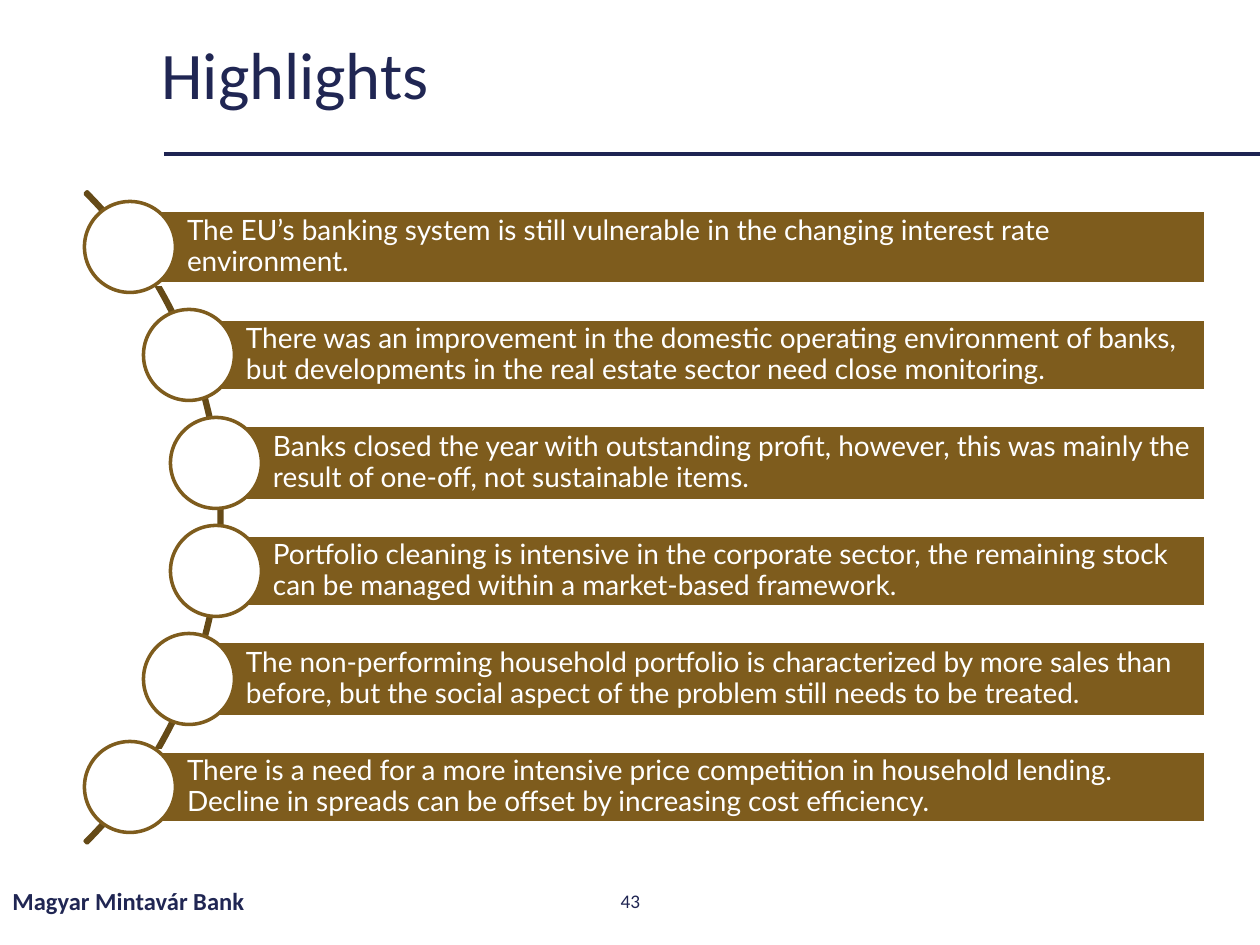
from lxml import etree
from pptx import Presentation
from pptx.dml.color import RGBColor
from pptx.enum.shapes import MSO_CONNECTOR, MSO_SHAPE
from pptx.enum.text import MSO_ANCHOR, PP_ALIGN
from pptx.oxml.ns import qn
from pptx.util import Emu, Pt

COLORS = {"navy": "202653", "rule": "1E2452", "bar": "7E5C1D",
          "arc": "654A17", "white": "FFFFFF"}

TITLE = "Highlights"
BANK = "Magyar Mintavár Bank"
PAGE = "43"

# (text, x of the circle's centre, bar height)
HIGHLIGHTS = [
    ("The EU’s banking system is still vulnerable in the changing interest rate "
     "environment.", 130, 74),
    ("There was an improvement in the domestic operating environment of banks, "
     "but developments in the real estate sector need close monitoring.", 189, 72),
    ("Banks closed the year with outstanding profit, however, this was mainly the "
     "result of one-off, not sustainable items.", 216, 76),
    ("Portfolio cleaning is intensive in the corporate sector, the remaining stock "
     "can be managed within a market-based framework.", 216, 72),
    ("The non-performing household portfolio is characterized by more sales than "
     "before, but the social aspect of the problem still needs to be treated.", 189, 76),
    ("There is a need for a more intensive price competition in household lending. "
     "Decline in spreads can be offset by increasing cost efficiency.", 130, 72),
]
FIRST_CENTER, PITCH = 247, 108
CIRCLE = 91
BAR_RIGHT = 1206
ARC_LEFT, ARC_TOP, ARC_SIZE = -699, 57, 921


def px(n):
    return Emu(round(n * 914400 / 126))


def rgb(name):
    return RGBColor.from_string(COLORS[name])


def write(shape, text, size, color="navy", font="Calibri", bold=False,
          align=PP_ALIGN.LEFT, spacing=None, insets=None):
    frame = shape.text_frame
    frame.word_wrap = True
    frame.vertical_anchor = MSO_ANCHOR.MIDDLE
    if insets:
        (frame.margin_left, frame.margin_top,
         frame.margin_right, frame.margin_bottom) = map(px, insets)
    paragraph = frame.paragraphs[0]
    paragraph.alignment = align
    if spacing:
        paragraph.line_spacing = spacing
    run = paragraph.add_run()
    run.text = text
    run.font.name, run.font.size, run.font.bold = font, Pt(size), bold
    run.font.color.rgb = rgb(color)


def add_text(slide, box, text, size, **style):
    write(slide.shapes.add_textbox(*map(px, box)), text, size, **style)


def add_outlined(slide, kind, box, line, fill=None):
    shape = slide.shapes.add_shape(kind, *map(px, box))
    shape.shadow.inherit = False
    if fill:
        shape.fill.solid()
        shape.fill.fore_color.rgb = rgb(fill)
    else:
        shape.fill.background()
    shape.line.color.rgb = rgb(line)
    shape.line.width = Pt(2)
    return shape


def add_rule(slide, left, right, y):
    rule = slide.shapes.add_connector(MSO_CONNECTOR.STRAIGHT,
                                      px(left), px(y), px(right), px(y))
    rule.line.color.rgb = rgb("rule")
    rule.line.width = Pt(2.25)
    etree.SubElement(rule._element.spPr, qn("a:effectLst"))


def add_highlight(slide, text, center_x, center_y, height):
    bar = add_outlined(slide, MSO_SHAPE.RECTANGLE,
                       (center_x, center_y - height / 2, BAR_RIGHT - center_x, height),
                       line="white", fill="bar")
    write(bar, text, 16, color="white", font="Lato", spacing=0.9, insets=(57, 5, 5, 5))
    add_outlined(slide, MSO_SHAPE.OVAL,
                 (center_x - CIRCLE / 2, center_y - CIRCLE / 2, CIRCLE, CIRCLE),
                 line="bar", fill="white")


def main():
    deck = Presentation()
    deck.slide_width, deck.slide_height = px(1260), px(945)
    slide = deck.slides.add_slide(deck.slide_layouts[6])

    add_rule(slide, 164, 1260, 154)
    add_text(slide, (149, 25, 1032, 105), TITLE, 38, spacing=0.9)
    add_text(slide, (0, 876, 426, 50), BANK, 14, bold=True)
    add_text(slide, (489, 876, 283, 50), PAGE, 11, align=PP_ALIGN.CENTER)

    arc = add_outlined(slide, MSO_SHAPE.BLOCK_ARC,
                       (ARC_LEFT, ARC_TOP, ARC_SIZE, ARC_SIZE), line="arc")
    # start angle 315°, end angle 45°, a hair-thin band
    for i, value in enumerate((189, 27, 0.003)):
        arc.adjustments[i] = value

    for i, (text, center_x, height) in enumerate(HIGHLIGHTS):
        add_highlight(slide, text, center_x, FIRST_CENTER + i * PITCH, height)

    deck.save("out.pptx")


if __name__ == "__main__":
    main()
